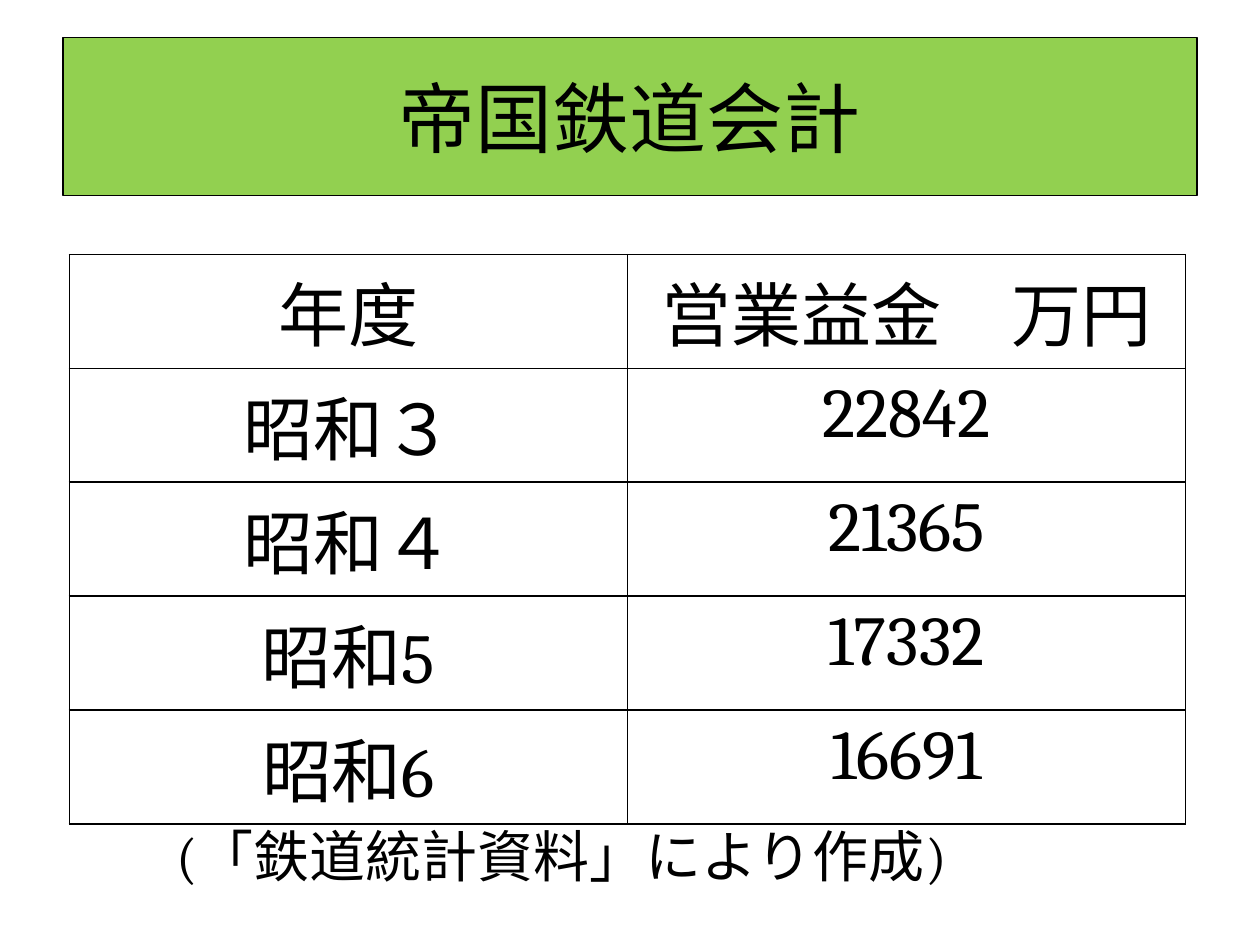
from lxml.etree import SubElement
from pptx import Presentation
from pptx.dml.color import RGBColor
from pptx.enum.text import MSO_ANCHOR as Anchor, PP_ALIGN as Align
from pptx.oxml.ns import qn
from pptx.util import Inches, Pt

COLORS = {"ink": "000000", "banner": "92D050"}
COLUMNS, ROWS = 1000, 750
ACCOUNTS = [
    ("年度", "営業益金　万円"),
    ("昭和３", "22842"),
    ("昭和４", "21365"),
    ("昭和5", "17332"),
    ("昭和6", "16691"),
]
FORMATS = {
    "title": {"name": "Calibri", "size": Pt(44), "bold": False},
    "cell": {"name": "Cambria", "size": Pt(40), "bold": False},
    "source": {"name": "Cambria", "size": Pt(32), "bold": False},
}


def color(name):
    return RGBColor.from_string(COLORS[name])


def grid_box(deck, left, top, width, height):
    column, row = deck.slide_width / COLUMNS, deck.slide_height / ROWS
    return [int(n * unit) for n, unit in zip((left, top, width, height), (column, row) * 2)]


def write(frame, text, style, align):
    para = frame.paragraphs[0]
    para.alignment = align
    span = para.add_run()
    span.text = text
    for key, value in FORMATS[style].items():
        setattr(span.font, key, value)
    span.font.color.rgb = color("ink")


def add_borders(cell):
    properties = cell._tc.get_or_add_tcPr()
    for index, side in enumerate(("lnL", "lnR", "lnT", "lnB")):
        line = SubElement(properties, qn(f"a:{side}"), w=str(Pt(1)))
        fill = SubElement(line, qn("a:solidFill"))
        SubElement(fill, qn("a:srgbClr"), val=COLORS["ink"])
        properties.insert(index, line)


def add_title(page, box):
    title = page.shapes.title
    for key, value in zip(("left", "top", "width", "height"), box):
        setattr(title, key, value)
    title.fill.solid()
    title.fill.fore_color.rgb = color("banner")
    title.line.color.rgb = color("ink")
    title.line.width = Pt(0.75)
    title.text_frame.vertical_anchor = Anchor.MIDDLE
    write(title.text_frame, "帝国鉄道会計", "title", Align.CENTER)


def add_accounts(page, box):
    table = page.shapes.add_table(len(ACCOUNTS), len(ACCOUNTS[0]), *box).table
    table.first_row = table.horz_banding = False
    for row, values in zip(table.rows, ACCOUNTS):
        for cell, value in zip(row.cells, values):
            cell.fill.background()
            add_borders(cell)
            write(cell.text_frame, value, "cell", Align.CENTER)


def add_source(page, box):
    frame = page.shapes.add_textbox(*box).text_frame
    frame.word_wrap = True
    frame.vertical_anchor = Anchor.TOP
    write(frame, "(「鉄道統計資料」により作成)", "source", Align.LEFT)


def main():
    deck = Presentation()
    deck.slide_width, deck.slide_height = Inches(10), Inches(7.5)
    page = deck.slides.add_slide(deck.slide_layouts[5])
    add_title(page, grid_box(deck, 50, 30, 900, 125))
    add_accounts(page, grid_box(deck, 55, 202, 886, 383))
    add_source(page, grid_box(deck, 130, 647, 726, 90))
    deck.save("out.pptx")


if __name__ == "__main__":
    main()
